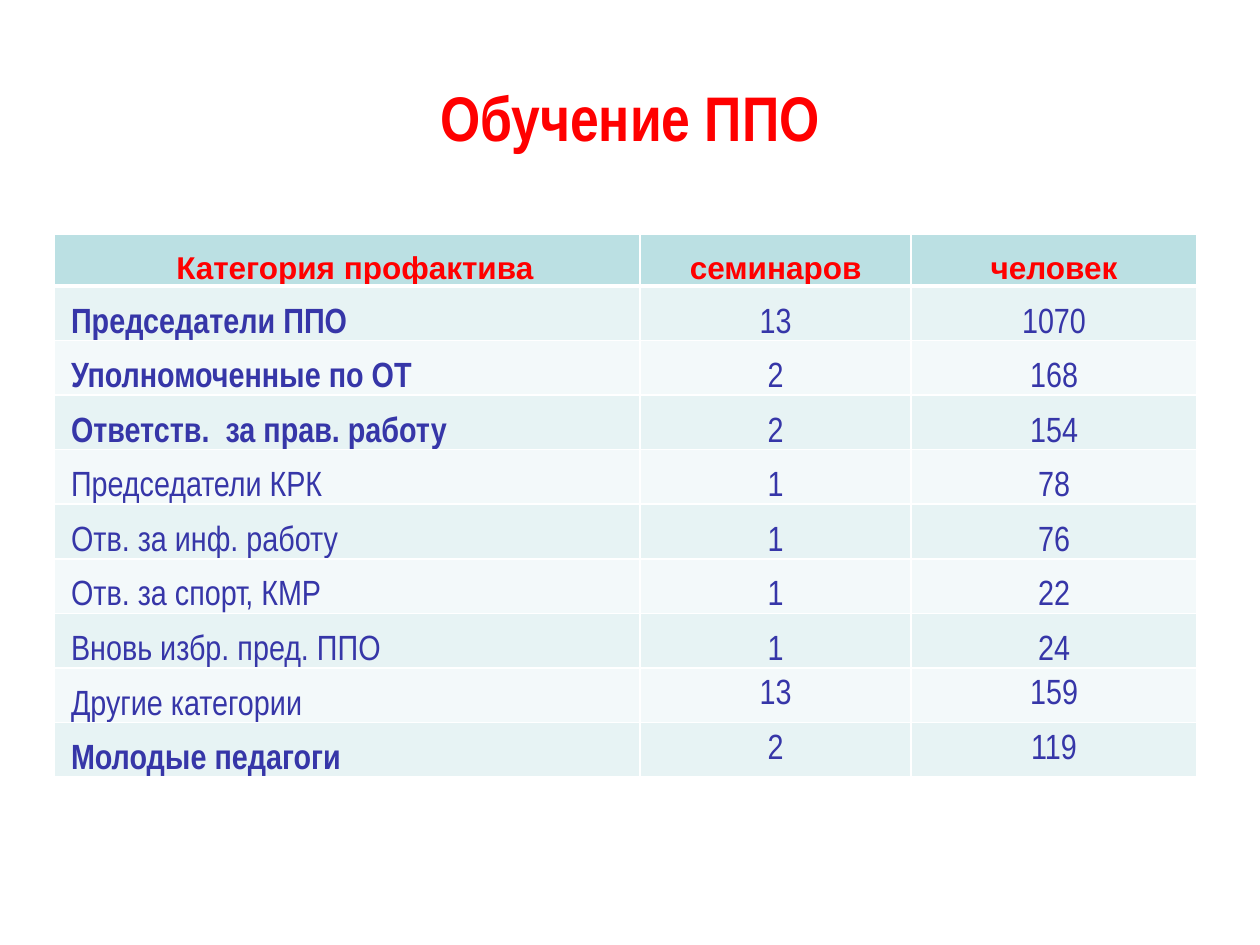
from lxml import etree
from pptx import Presentation
from pptx.dml.color import RGBColor
from pptx.enum.text import MSO_ANCHOR, PP_ALIGN
from pptx.oxml.ns import qn
from pptx.util import Pt

LEFT, CENTER = PP_ALIGN.LEFT, PP_ALIGN.CENTER
MIDDLE, BOTTOM = MSO_ANCHOR.MIDDLE, MSO_ANCHOR.BOTTOM

RED = RGBColor(0xFF, 0x00, 0x00)
BLUE = RGBColor(0x36, 0x36, 0xA8)
WHITE = RGBColor(0xFF, 0xFF, 0xFF)
TEAL = RGBColor(0xBB, 0xE0, 0xE3)
BANDS = (RGBColor(0xE7, 0xF3, 0xF4), RGBColor(0xF3, 0xF9, 0xFA))

# Content: category, seminars, people, bold category, anchor of numbers
TITLE = "Обучение ППО"
HEADS = ("Категория профактива", "семинаров", "человек")
ROWS = [
    ("Председатели ППО", "13", "1070", True, BOTTOM),
    ("Уполномоченные по ОТ", "2", "168", True, BOTTOM),
    ("Ответств.  за прав. работу", "2", "154", True, BOTTOM),
    ("Председатели КРК", "1", "78", False, BOTTOM),
    ("Отв. за инф. работу", "1", "76", False, BOTTOM),
    ("Отв. за спорт, КМР", "1", "22", False, BOTTOM),
    ("Вновь избр. пред. ППО", "1", "24", False, BOTTOM),
    ("Другие категории", "13", "159", False, MIDDLE),
    ("Молодые педагоги", "2", "119", True, MIDDLE),
]
COLS = (334.6, 154.9, 163.3)
HEAD_H, ROW_H = 29.3, 31.2
INDENT = 8.64


def write(frame, text, size=20, font="Arial Narrow", color=BLUE,
          bold=False, align=CENTER, indent=0):
    para = frame.paragraphs[0]
    para.alignment = align
    if indent:
        props = para._p.get_or_add_pPr()
        props.set("marL", "0")
        props.set("indent", str(int(Pt(indent))))
    run = para.add_run()
    run.text = text
    run.font.size = Pt(size)
    run.font.name = font
    run.font.bold = bold
    run.font.color.rgb = color


def edge(cell, side, width):
    line = etree.SubElement(cell._tc.get_or_add_tcPr(), qn("a:" + side),
                            w=str(int(Pt(width))))
    fill = etree.SubElement(line, qn("a:solidFill"))
    etree.SubElement(fill, qn("a:srgbClr"), val=str(WHITE))


def dress(cell, fill, anchor, top=1, low=1):
    for side, width in (("lnL", 1), ("lnR", 1), ("lnT", top), ("lnB", low)):
        edge(cell, side, width)
    cell.fill.solid()
    cell.fill.fore_color.rgb = fill
    cell.vertical_anchor = anchor
    cell.margin_left = cell.margin_right = cell.margin_top = Pt(0.75)
    cell.margin_bottom = 0


def main():
    prs = Presentation()
    prs.slide_width, prs.slide_height = Pt(720), Pt(540)
    slide = prs.slides.add_slide(prs.slide_layouts[5])

    # Title
    title = slide.shapes.title
    title.left, title.top = Pt(36), Pt(21.6)
    title.width, title.height = Pt(648), Pt(90)
    title.text_frame.vertical_anchor = MIDDLE
    write(title.text_frame, TITLE, size=36, color=RED, bold=True)

    # Table grid
    height = HEAD_H + ROW_H * len(ROWS)
    table = slide.shapes.add_table(
        len(ROWS) + 1, len(COLS), Pt(31.2), Pt(134.1),
        Pt(sum(COLS)), Pt(height)).table
    for col, width in zip(table.columns, COLS):
        col.width = Pt(width)
    for i, row in enumerate(table.rows):
        row.height = Pt(ROW_H if i else HEAD_H)

    # Header row
    for c, head in enumerate(HEADS):
        cell = table.cell(0, c)
        dress(cell, TEAL, BOTTOM, low=3)
        write(cell.text_frame, head, size=18, font="Arial", color=RED,
              bold=True, indent=0 if c else INDENT)

    # Body rows
    for r, (*texts, bold, anchor) in enumerate(ROWS, 1):
        for c, text in enumerate(texts):
            cell = table.cell(r, c)
            dress(cell, BANDS[(r - 1) % 2], anchor if c else BOTTOM,
                  top=3 if r == 1 else 1)
            if c:
                write(cell.text_frame, text)
            else:
                write(cell.text_frame, text, bold=bold, align=LEFT,
                      indent=INDENT)

    prs.save("out.pptx")


if __name__ == "__main__":
    main()
